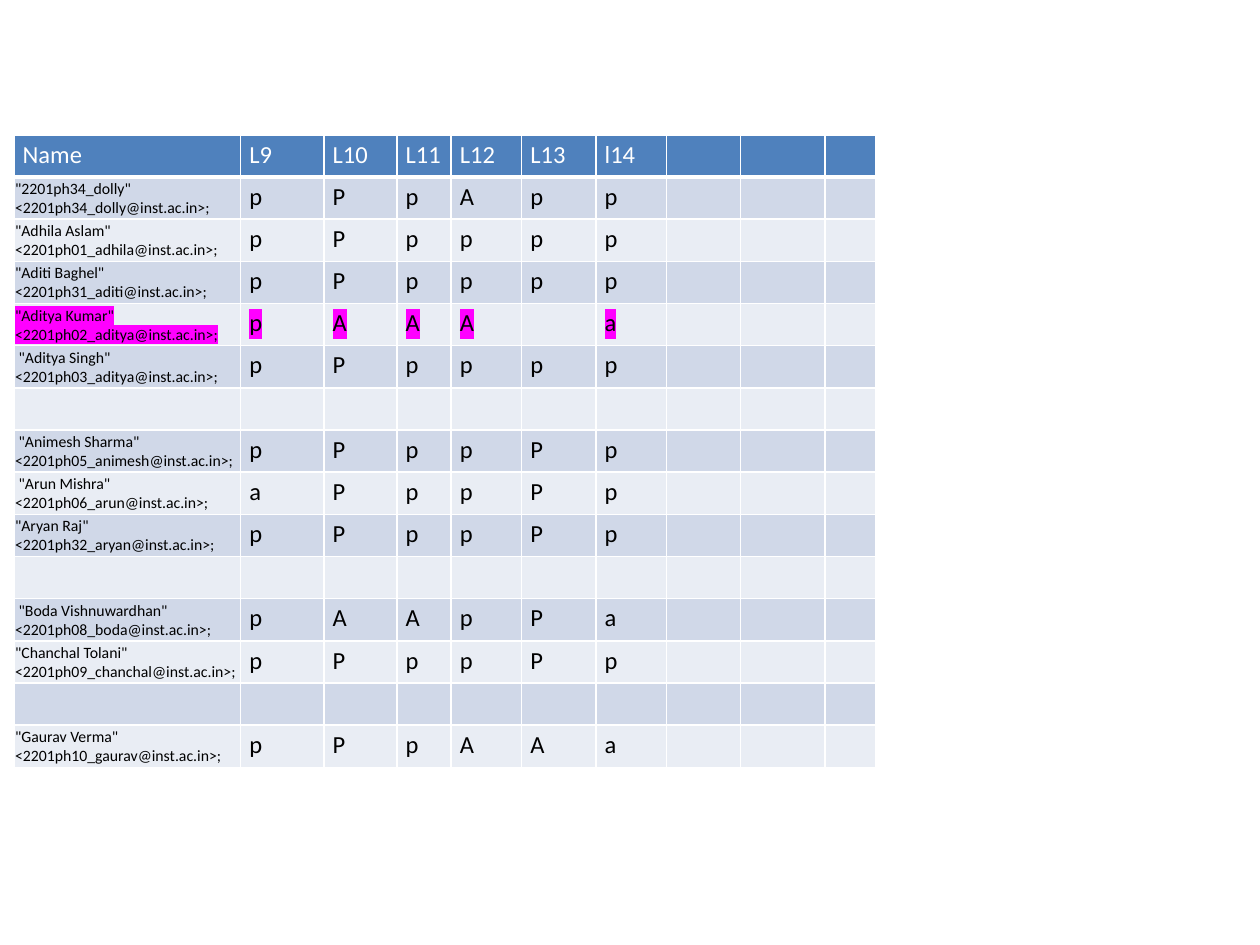
import typing

import lxml.etree
import pptx
import pptx.dml.color
import pptx.enum.text
import pptx.oxml.ns
import pptx.util

Inches, Pt = pptx.util.Inches, pptx.util.Pt
RGB = pptx.dml.color.RGBColor.from_string
qn = pptx.oxml.ns.qn

COLORS = {
    "header": "4F81BD",
    "odd": "D0D8E8",
    "even": "E9EDF4",
    "white": "FFFFFF",
    "text": "000000",
    "mark": "FF00FF",
}
DOMAIN = "inst.ac.in"
HEADINGS = ["Name", "L9", "L10", "L11", "L12", "L13", "l14"]
COL_WIDTHS = [1.8, 0.66, 0.58, 0.43, 0.56, 0.59, 0.56, 0.59, 0.67, 0.4]
LEFT, TOP, ROW_HEIGHT = 0.11, 1.07, 0.335

NAME_FORMAT = {
    "margin_left": Inches(0.01),
    "margin_right": Inches(0.01),
    "margin_top": Inches(0.01),
    "margin_bottom": Inches(0),
    "vertical_anchor": pptx.enum.text.MSO_ANCHOR.MIDDLE,
}
MARK_FORMAT = {
    "margin_left": Inches(0.07),
    "margin_right": Inches(0.07),
    "margin_top": Inches(0.04),
    "margin_bottom": Inches(0.04),
    "vertical_anchor": pptx.enum.text.MSO_ANCHOR.TOP,
}


class Student(typing.NamedTuple):
    name: str
    user: str
    marks: str  # one letter per lecture, a space where none was entered
    highlighted: bool = False

    def cells(self) -> list[str]:
        return [f"{self.name} <{self.user}@{DOMAIN}>;", *(m.strip() for m in self.marks)]


# None leaves an empty row
STUDENTS = [
    Student('"2201ph34_dolly"', "2201ph34_dolly", "pPpApp"),
    Student('"Adhila Aslam"', "2201ph01_adhila", "pPpppp"),
    Student('"Aditi Baghel"', "2201ph31_aditi", "pPpppp"),
    Student('"Aditya Kumar"', "2201ph02_aditya", "pAAA a", True),
    Student(' "Aditya Singh"', "2201ph03_aditya", "pPpppp"),
    None,
    Student(' "Animesh Sharma"', "2201ph05_animesh", "pPppPp"),
    Student(' "Arun Mishra"', "2201ph06_arun", "aPppPp"),
    Student('"Aryan Raj"', "2201ph32_aryan", "pPppPp"),
    None,
    Student(' "Boda Vishnuwardhan"', "2201ph08_boda", "pAApPa"),
    Student('"Chanchal Tolani"', "2201ph09_chanchal", "pPppPp"),
    None,
    Student('"Gaurav Verma"', "2201ph10_gaurav", "pPpAAa"),
]


def solid_fill(parent, color: str, tag: str = "a:solidFill"):
    fill = lxml.etree.SubElement(parent, qn(tag))
    lxml.etree.SubElement(fill, qn("a:srgbClr"), val=COLORS[color])
    return fill


def set_borders(cell, bottom: float) -> None:
    """Give the cell white borders, with its own width at the bottom."""
    tcPr = cell._tc.get_or_add_tcPr()
    for i, (side, width) in enumerate([("L", 1), ("R", 1), ("T", 1), ("B", bottom)]):
        ln = lxml.etree.Element(qn(f"a:ln{side}"), w=str(Pt(width)))
        solid_fill(ln, "white")
        tcPr.insert(i, ln)


def write_cell(cell, text: str, size: float, color: str, highlighted: bool) -> None:
    p = cell.text_frame.paragraphs[0]
    if not text:
        # The size of an empty paragraph keeps the row from growing
        lxml.etree.SubElement(p._p, qn("a:endParaRPr"), sz=str(int(size * 100)))
        return
    r = p.add_run()
    r.text = text
    for key, value in {"name": "Calibri", "size": Pt(size), "bold": False}.items():
        setattr(r.font, key, value)
    r.font.color.rgb = RGB(COLORS[color])
    if highlighted:
        rPr = r._r.get_or_add_rPr()
        rPr.find(qn("a:solidFill")).addnext(solid_fill(rPr, "mark", "a:highlight"))


def draw_row(table, row: int, texts: list[str], fill: str, highlighted: bool = False) -> None:
    header = row == 0
    table.rows[row].height = Inches(ROW_HEIGHT)
    for col in range(len(COL_WIDTHS)):
        cell = table.cell(row, col)
        text = texts[col] if col < len(texts) else ""
        is_name = col == 0 and bool(text) and not header
        for key, value in (NAME_FORMAT if is_name else MARK_FORMAT).items():
            setattr(cell, key, value)
        cell.fill.solid()
        cell.fill.fore_color.rgb = RGB(COLORS[fill])
        set_borders(cell, 3 if header else 1)
        write_cell(cell, text, 9 if is_name else 14,
                   "white" if header else "text", highlighted)


def main() -> None:
    prs = pptx.Presentation()
    prs.slide_width, prs.slide_height = Inches(10), Inches(7.5)
    s = prs.slides.add_slide(prs.slide_layouts[6])

    # Attendance table
    rows = len(STUDENTS) + 1
    table = s.shapes.add_table(
        rows, len(COL_WIDTHS), Inches(LEFT), Inches(TOP),
        Inches(sum(COL_WIDTHS)), Inches(rows * ROW_HEIGHT),
    ).table
    for column, width in zip(table.columns, COL_WIDTHS):
        column.width = Inches(width)

    # Heading, then one banded row per student
    draw_row(table, 0, HEADINGS, "header")
    for row, student in enumerate(STUDENTS, start=1):
        draw_row(
            table, row,
            student.cells() if student else [],
            "odd" if row % 2 else "even",
            bool(student and student.highlighted),
        )
    prs.save("out.pptx")


if __name__ == "__main__":
    main()
